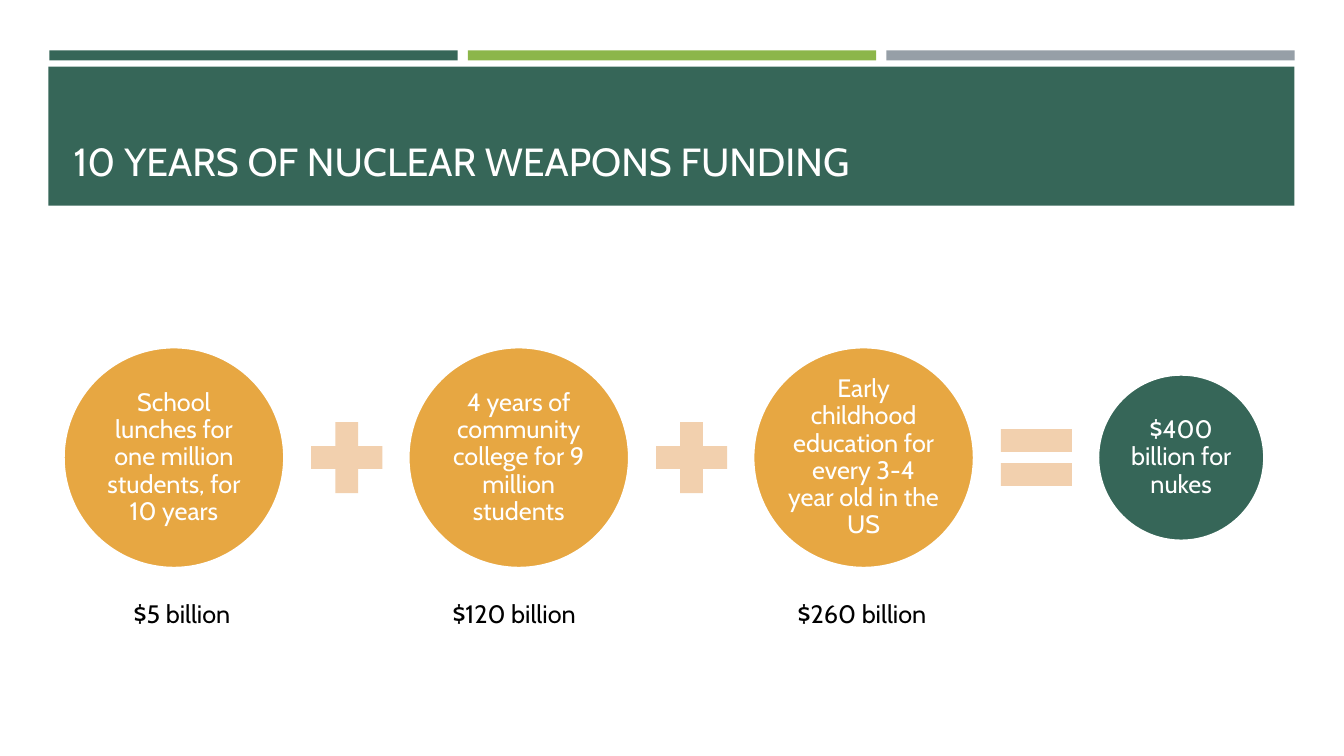
from pptx import Presentation
from pptx.dml.color import RGBColor
from pptx.enum.shapes import MSO_SHAPE
from pptx.enum.text import MSO_ANCHOR, MSO_AUTO_SIZE, PP_ALIGN
from pptx.util import Inches, Pt

RECT, OVAL = MSO_SHAPE.RECTANGLE, MSO_SHAPE.OVAL
PLUS, EQUAL = MSO_SHAPE.MATH_PLUS, MSO_SHAPE.MATH_EQUAL
LEFT, CENTER = PP_ALIGN.LEFT, PP_ALIGN.CENTER
TOP, MIDDLE, BOTTOM = MSO_ANCHOR.TOP, MSO_ANCHOR.MIDDLE, MSO_ANCHOR.BOTTOM
NO_FIT = MSO_AUTO_SIZE.NONE

GREEN = RGBColor(0x36, 0x66, 0x58)
LIME = RGBColor(0x8C, 0xB6, 0x4A)
GRAY = RGBColor(0x96, 0x9F, 0xA7)
AMBER = RGBColor(0xE7, 0xA7, 0x42)
PEACH = RGBColor(0xF2, 0xD0, 0xAE)
WHITE = RGBColor(0xFF, 0xFF, 0xFF)
BLACK = RGBColor(0x00, 0x00, 0x00)

FONT = "Cabin"
MID_Y = 4.54
FIRST_X, PITCH = 0.63, 3.42
COSTS = [
    ("School lunches for one million students, for 10 years", PLUS, "$5 billion", 1.17, 1.27),
    ("4 years of community college for 9 million students", PLUS, "$120 billion", 4.32, 1.56),
    ("Early childhood education for every 3-4 year old in the US", EQUAL, "$260 billion", 7.77, 1.56),
]


class Deck:
    """Holds the style and the current slide, and draws each kind of element."""

    def __init__(self):
        self.prs = Presentation()
        self.prs.slide_width = Inches(13.33)
        self.prs.slide_height = Inches(7.5)
        self.s = self.prs.slides.add_slide(self.prs.slide_layouts[5])

    def set_text(self, sp, text, size, color, align, anchor, margins=(0.1, 0.05), spacing=1.0):
        tf = sp.text_frame
        tf.text = text
        tf.word_wrap = True
        tf.auto_size = NO_FIT
        tf.vertical_anchor = anchor
        tf.margin_left = tf.margin_right = Inches(margins[0])
        tf.margin_top = tf.margin_bottom = Inches(margins[1])
        p = tf.paragraphs[0]
        p.alignment = align
        p.line_spacing = spacing
        r = p.runs[0]
        r.font.name = FONT
        r.font.size = Pt(size)
        r.font.color.rgb = color

    def shape(self, kind, left, top, width, height, color):
        sp = self.s.shapes.add_shape(kind, Inches(left), Inches(top), Inches(width), Inches(height))
        sp.shadow.inherit = False
        sp.fill.solid()
        sp.fill.fore_color.rgb = color
        sp.line.fill.background()
        return sp

    def title(self, text, left, top, width, height):
        sp = self.s.shapes.title
        sp.left, sp.top = Inches(left), Inches(top)
        sp.width, sp.height = Inches(width), Inches(height)
        self.set_text(sp, text, 28, WHITE, LEFT, BOTTOM)
        self.s.shapes.element.append(sp.element)

    def circle(self, text, left, size, color):
        sp = self.shape(OVAL, left, MID_Y - size / 2, size, size, color)
        sp.line.color.rgb = WHITE
        sp.line.width = Pt(1.75)
        self.set_text(sp, text, 18, WHITE, CENTER, MIDDLE, (0.02, 0.02), 0.9)

    def sign(self, kind, left, size):
        sp = self.shape(kind, left, MID_Y - size / 2, size, size, PEACH)
        sp.adjustments[0] = 0.235

    def label(self, text, left, top, width, height):
        sp = self.s.shapes.add_textbox(Inches(left), Inches(top), Inches(width), Inches(height))
        self.set_text(sp, text, 18, BLACK, CENTER, TOP)


def main():
    deck = Deck()
    for i, color in enumerate((GREEN, LIME, GRAY)):
        deck.shape(RECT, 0.49 + 4.15 * i, 0.5, 4.05, 0.1, color)
    deck.shape(RECT, 0.48, 0.66, 12.36, 1.38, GREEN)
    deck.title("10 YEARS OF NUCLEAR WEAPONS FUNDING", 0.63, 0.8, 12.06, 1.08)
    for i, (purpose, sign, cost, cost_left, cost_width) in enumerate(COSTS):
        left = FIRST_X + PITCH * i
        deck.circle(purpose, left, 2.19, AMBER)
        deck.sign(sign, left + 2.33, 0.96)
        deck.label(cost, cost_left, 5.89, cost_width, 0.4)
    deck.circle("$400 billion for nukes", FIRST_X + PITCH * len(COSTS), 1.65, GREEN)
    deck.prs.save("out.pptx")


if __name__ == "__main__":
    main()
